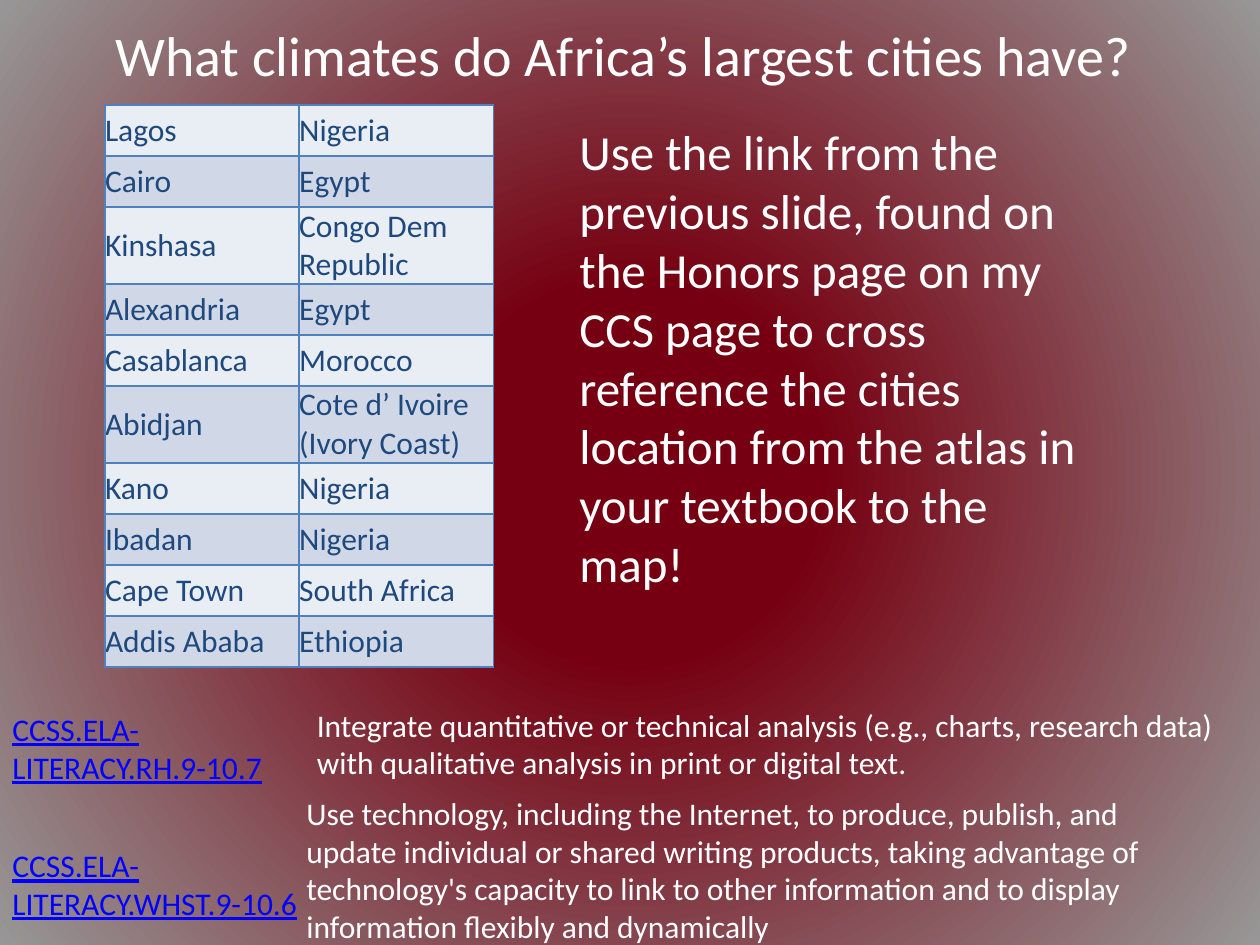
"""Build a slide that asks which climates Africa's largest cities have."""
from typing import NamedTuple

from pptx import Presentation
from pptx.dml.color import RGBColor
from pptx.enum.text import MSO_ANCHOR, PP_ALIGN
from pptx.oxml import parse_xml
from pptx.oxml.ns import nsdecls, qn
from pptx.util import Emu, Inches, Pt

TOP, MIDDLE = MSO_ANCHOR.TOP, MSO_ANCHOR.MIDDLE
LEFT, CENTER = PP_ALIGN.LEFT, PP_ALIGN.CENTER

WHITE = RGBColor(0xFF, 0xFF, 0xFF)
LINK_BLUE = RGBColor(0x00, 0x00, 0xFF)
NAVY = RGBColor(0x1F, 0x49, 0x7D)
BORDER = RGBColor(0x4F, 0x81, 0xBD)
BANDS = (RGBColor(0xE9, 0xED, 0xF4), RGBColor(0xD0, 0xD8, 0xE8))
MAROON = RGBColor(0x76, 0x00, 0x11)
GRAY = RGBColor(0x97, 0x97, 0x97)

FONT = "Calibri"
COLS, ROWS = 120, 90
WIDTH, HEIGHT = Inches(10), Inches(7.5)


class Box(NamedTuple):
    """Place on the slide grid, in columns and rows."""
    col: float
    row: float
    cols: float
    rows: float

    def emu(self) -> tuple:
        """Return left, top, width and height as lengths."""
        x, y = WIDTH / COLS, HEIGHT / ROWS
        return tuple(Emu(round(n * u)) for n, u in zip(self, (x, y, x, y)))


class Note(NamedTuple):
    """Text block with its place and format."""
    text: str
    box: Box
    size: int = 18
    color: RGBColor = WHITE
    underline: bool = False
    align: PP_ALIGN = LEFT
    anchor: MSO_ANCHOR = TOP


class City(NamedTuple):
    """City and its country."""
    name: str
    country: str


NOTES = (
    Note("What climates do Africa’s largest cities have? ", Box(6, 0, 108, 10.4),
         size=32, align=CENTER, anchor=MIDDLE),
    Note("Use the link from the previous slide, found on the Honors page on my "
         "CCS page to cross reference the cities location from the atlas in "
         "your textbook to the map!", Box(54, 11, 52, 46.4), size=28),
    Note("CCSS.ELA-LITERACY.WHST.9-10.6", Box(0, 80, 30, 8.5),
         color=LINK_BLUE, underline=True),
    Note("Use technology, including the Internet, to produce, publish, and "
         "update individual or shared writing products, taking advantage of "
         "technology's capacity to link to other information and to display "
         "information flexibly and dynamically", Box(28, 75, 89, 15.7)),
    Note("Integrate quantitative or technical analysis (e.g., charts, research "
         "data) with qualitative analysis in print or digital text.",
         Box(29, 66.6, 91, 8.5)),
    Note("CCSS.ELA-LITERACY.RH.9-10.7", Box(0, 67, 27, 8.5),
         color=LINK_BLUE, underline=True),
)

CITIES = (
    City("Lagos", "Nigeria"),
    City("Cairo", "Egypt"),
    City("Kinshasa", "Congo Dem Republic"),
    City("Alexandria", "Egypt"),
    City("Casablanca", "Morocco"),
    City("Abidjan", "Cote d’ Ivoire (Ivory Coast)"),
    City("Kano", "Nigeria"),
    City("Ibadan", "Nigeria"),
    City("Cape Town", "South Africa"),
    City("Addis Ababa", "Ethiopia"),
)
CITY_BOX = Box(10, 10, 37, 48.6)


def set_all(obj, values: dict) -> None:
    """Set each named attribute of an object."""
    for name, value in values.items():
        setattr(obj, name, value)


def write(tf, text: str, size: int, color: RGBColor,
          underline: bool = False, align: PP_ALIGN = LEFT) -> None:
    """Write one formatted run into a text frame."""
    p = tf.paragraphs[0]
    p.alignment = align
    r = p.add_run()
    r.text = text
    set_all(r.font, {"name": FONT, "size": Pt(size), "underline": underline})
    r.font.color.rgb = color


def paint_background(s) -> None:
    """Fill the background with a gradient around the centre."""
    fill = s.background.fill
    fill.gradient()
    for stop, color, position in zip(fill.gradient_stops, (MAROON, GRAY), (0.24, 1)):
        stop.color.rgb = color
        stop.position = position
    grad = s.element.find(".//" + qn("a:gradFill"))
    grad.replace(grad.find(qn("a:lin")), parse_xml(
        f'<a:path {nsdecls("a")} path="circle">'
        '<a:fillToRect l="50000" t="50000" r="50000" b="50000"/></a:path>'))


def add_note(s, note: Note) -> None:
    """Add a wrapped text box."""
    tf = s.shapes.add_textbox(*note.box.emu()).text_frame
    set_all(tf, {"word_wrap": True, "vertical_anchor": note.anchor})
    write(tf, note.text, note.size, note.color, note.underline, note.align)


def add_borders(cell) -> None:
    """Draw a thin line on each side of a cell."""
    props = cell._tc.get_or_add_tcPr()
    for i, side in enumerate("LRTB"):
        props.insert(i, parse_xml(
            f'<a:ln{side} {nsdecls("a")} w="{Pt(1)}"><a:solidFill>'
            f'<a:srgbClr val="{BORDER}"/></a:solidFill></a:ln{side}>'))


def add_cities(s, cities: tuple, box: Box) -> None:
    """Add the banded table of cities and countries."""
    table = s.shapes.add_table(len(cities), len(City._fields), *box.emu()).table
    set_all(table, {"first_row": False, "horz_banding": False})
    for i, city in enumerate(cities):
        for j, text in enumerate(city):
            cell = table.cell(i, j)
            set_all(cell, {"vertical_anchor": MIDDLE, "margin_left": 0,
                           "margin_right": 0, "margin_top": 0, "margin_bottom": 0})
            cell.fill.solid()
            cell.fill.fore_color.rgb = BANDS[i % 2]
            add_borders(cell)
            write(cell.text_frame, text, 18, NAVY)


def main() -> None:
    """Build and save the slide."""
    prs = Presentation()
    set_all(prs, {"slide_width": WIDTH, "slide_height": HEIGHT})
    s = prs.slides.add_slide(prs.slide_layouts[6])
    paint_background(s)
    add_cities(s, CITIES, CITY_BOX)
    for note in NOTES:
        add_note(s, note)
    prs.save("out.pptx")


if __name__ == "__main__":
    main()
